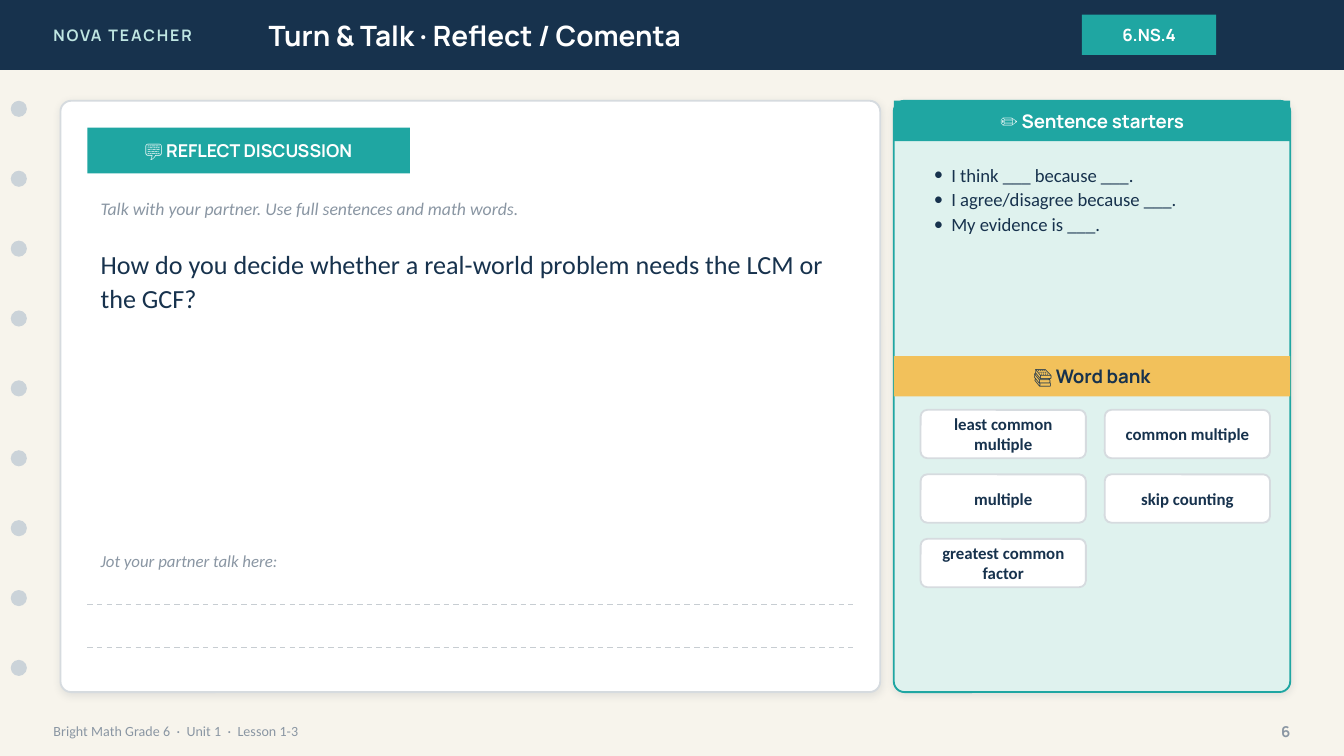
from lxml.etree import SubElement
from pptx import Presentation
from pptx.dml.color import RGBColor
from pptx.enum.dml import MSO_LINE
from pptx.enum.shapes import MSO_CONNECTOR, MSO_SHAPE
from pptx.enum.text import MSO_ANCHOR, PP_ALIGN
from pptx.oxml.ns import qn
from pptx.util import Inches, Pt

TITLE = "Turn & Talk · Reflect / Comenta"
BRAND = "NOVA TEACHER"
CODE = "6.NS.4"
FOOTER = "Bright Math Grade 6  ·  Unit 1  ·  Lesson 1-3"
PAGE = "6"
TAG = "💬 REFLECT DISCUSSION"
HINT = "Talk with your partner. Use full sentences and math words."
QUESTION = "How do you decide whether a real-world problem needs the LCM or the GCF?"
JOT = "Jot your partner talk here:"
STARTERS = ["I think ___ because ___.", "I agree/disagree because ___.", "My evidence is ___."]
WORDS = ["least common multiple", "common multiple", "multiple", "skip counting",
         "greatest common factor"]

THEME = {
    "head": "Manrope", "body": "Calibri",
    "paper": "F7F4EC", "navy": "17324D", "teal": "1FA6A2", "mint": "DFF2EE",
    "pale": "BFE6E2", "gold": "F2C15B", "white": "FFFFFF", "grey": "8A96A3",
    "hole": "CBD3D9", "edge": "D6DBDF", "rule": "C7CDD2", "shade": "1C2E42",
    "title": 15, "ask": 14, "label": 10, "tag": 9.5, "small": 9,
    "brand": 8.5, "page": 8, "foot": 7.5,
}

TOP, HIGH = 0.75, 4.4          # both cards
LEFT, WIDE = 0.45, 6.1         # discussion card
SIDE, SPAN = 6.65, 2.95        # support card
PAD = 0.2
INNER = LEFT + PAD
ROOM = WIDE - 2 * PAD
BAR = 0.3

deck = Presentation()
deck.slide_width = Inches(10)
deck.slide_height = deck.slide_width * 9 // 16
slide = deck.slides.add_slide(deck.slide_layouts[6])


def color(name):
    return RGBColor.from_string(THEME[name])


def write(shape, lines, size, tint, font="body", bold=False, italic=False,
          align=PP_ALIGN.LEFT, anchor=MSO_ANCHOR.MIDDLE, space=None, track=None, bullet=False):
    frame = shape.text_frame
    frame.word_wrap = True
    frame.vertical_anchor = anchor
    frame.text = "\n".join(lines)
    for para in frame.paragraphs:
        para.alignment = align
        if space:
            para.line_spacing = space
        if bullet:
            props = para._p.get_or_add_pPr()
            props.set("marL", str(Inches(0.13)))
            props.set("indent", str(-Inches(0.13)))
            SubElement(props, qn("a:buFont"), typeface=THEME[font])
            SubElement(props, qn("a:buChar"), char="•")
        for run in para.runs:
            run.font.name = THEME[font]
            run.font.size = Pt(THEME[size])
            run.font.bold, run.font.italic = bold, italic
            run.font.color.rgb = color(tint)
            if track:
                run._r.get_or_add_rPr().set("spc", str(track))


def text(x, y, w, h, lines, size, tint, **style):
    box = slide.shapes.add_textbox(Inches(x), Inches(y), Inches(w), Inches(h))
    write(box, lines, size, tint, **style)


def block(x, y, w, h, fill, kind=MSO_SHAPE.RECTANGLE, edge=None, radius=None):
    shape = slide.shapes.add_shape(kind, Inches(x), Inches(y), Inches(w), Inches(h))
    shape.shadow.inherit = False
    shape.fill.solid()
    shape.fill.fore_color.rgb = color(fill)
    if edge:
        shape.line.color.rgb = color(edge)
        shape.line.width = Pt(1)
    else:
        shape.line.fill.background()
    if radius:
        shape.adjustments[0] = radius / min(w, h)
    return shape


def label(x, y, w, h, words, size, fill, tint="white"):
    write(block(x, y, w, h, fill), [words], size, tint, font="head", bold=True,
          align=PP_ALIGN.CENTER)


def card(x, w, fill, edge):
    """Rounded panel with a soft shadow."""
    shape = block(x, TOP, w, HIGH, fill, MSO_SHAPE.ROUNDED_RECTANGLE, edge, 0.08)
    effects = shape._element.spPr.find(qn("a:effectLst"))
    shadow = SubElement(effects, qn("a:outerShdw"), blurRad=str(Pt(4)), dist=str(Pt(1)),
                        dir="5400000", algn="ctr", rotWithShape="0")
    tone = SubElement(shadow, qn("a:srgbClr"), val=THEME["shade"])
    SubElement(tone, qn("a:alpha"), val="10000")


def rule(y):
    line = slide.shapes.add_connector(MSO_CONNECTOR.STRAIGHT, Inches(INNER), Inches(y),
                                      Inches(INNER + ROOM), Inches(y))
    line.line.color.rgb = color("rule")
    line.line.width = Pt(0.75)
    line.line.dash_style = MSO_LINE.DASH
    SubElement(line._element.spPr, qn("a:effectLst"))


slide.background.fill.solid()
slide.background.fill.fore_color.rgb = color("paper")

# Header, binder holes, footer
block(0, 0, 10, 0.52, "navy")
text(0.3, 0, 2.4, 0.52, [BRAND], "brand", "pale", font="head", bold=True, track=100)
text(1.9, 0, 5.6, 0.52, [TITLE], "title", "white", font="head", bold=True)
label(8.05, 0.11, 1, BAR, CODE, "small", "teal")
for i in range(9):
    block(0.08, TOP + i * 0.52, 0.12, 0.12, "hole", MSO_SHAPE.OVAL)
text(0.3, 5.3, 7, 0.28, [FOOTER], "foot", "grey")
text(9.2, 5.3, 0.5, 0.28, [PAGE], "page", "grey", font="head", bold=True,
     align=PP_ALIGN.RIGHT)

# Discussion card
card(LEFT, WIDE, "white", "edge")
label(INNER, TOP + PAD, 2.4, 0.34, TAG, "tag", "teal")
text(INNER, 1.4, ROOM, 0.3, [HINT], "tag", "grey", italic=True)
text(INNER, 1.78, ROOM, 2, [QUESTION], "ask", "navy", anchor=MSO_ANCHOR.TOP, space=1.08)
text(INNER, 4.05, ROOM, 0.25, [JOT], "small", "grey", italic=True)
for y in (4.5, 4.82):
    rule(y)

# Support card
card(SIDE, SPAN, "mint", "teal")
label(SIDE, TOP, SPAN, BAR, "✏️ Sentence starters", "label", "teal")
text(SIDE + PAD, 1.15, 2.6, 1.4, STARTERS, "label", "navy", anchor=MSO_ANCHOR.TOP,
     space=1.1, bullet=True)
label(SIDE, 2.65, SPAN, BAR, "📚 Word bank", "label", "gold", "navy")
for i, word in enumerate(WORDS):
    row, col = divmod(i, 2)
    chip = block(SIDE + PAD + col * 1.37, 3.05 + row * 0.48, 1.23, 0.36, "white",
                 MSO_SHAPE.ROUNDED_RECTANGLE, "edge", 0.05)
    write(chip, [word], "small", "navy", bold=True, align=PP_ALIGN.CENTER)

deck.save("out.pptx")
